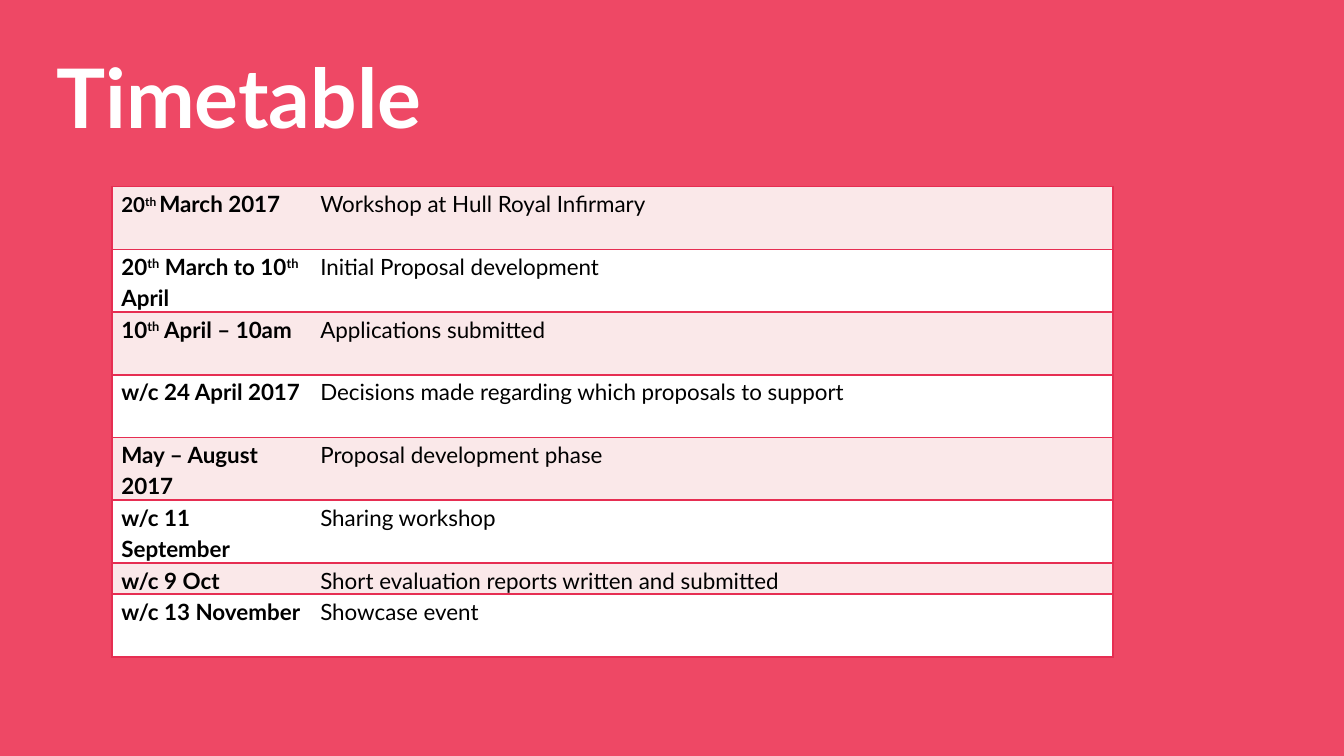
from lxml.etree import SubElement
from pptx import Presentation
from pptx.dml.color import RGBColor
from pptx.enum.text import MSO_ANCHOR, PP_ALIGN
from pptx.oxml.ns import qn
from pptx.util import Pt

FONT = "Lato"
BACKGROUND, BORDER = "EE4865", "E62E52"
BLACK, WHITE, PINK = "000000", "FFFFFF", "FAE8E9"
ROW_HEIGHT, SHORT_ROW_HEIGHT, SHORT_ROW = 33.6, 16.8, 6
COLUMN_WIDTHS = (106.6, 429.8)

SMALL = {"size": 11}
RAISED = {"raised": True}
TIMETABLE = [
    ([("20", SMALL), ("th ", SMALL | RAISED), ("March 2017", {})],
     "Workshop at Hull Royal Infirmary"),
    ([("20", {}), ("th", RAISED), (" March to 10", {}), ("th", RAISED), (" April", {})],
     "Initial Proposal development"),
    ([("10", {}), ("th", RAISED), (" April – 10am", {})], "Applications submitted"),
    ([("w/c 24 April 2017", {})], "Decisions made regarding which proposals to support"),
    ([("May – August 2017", {})], "Proposal development phase"),
    ([("w/c 11 September", {})], "Sharing workshop"),
    ([("w/c 9 Oct", {})], "Short evaluation reports written and submitted"),
    ([("w/c 13 November", {})], "Showcase event"),
]


def paint(fill, color):
    """Give a fill one solid colour."""
    fill.solid()
    fill.fore_color.rgb = RGBColor.from_string(color)


def add_text(para, text, size=12, color=BLACK, bold=False, raised=False):
    """Add a formatted span of text to a paragraph."""
    span = para.add_run()
    span.text = text
    span.font.name = FONT
    span.font.size = Pt(size)
    span.font.bold = bold
    span.font.color.rgb = RGBColor.from_string(color)
    if raised:
        span.font._element.set("baseline", "30000")


def add_borders(cell, visible_sides):
    """Draw the named sides of a cell and hide the others."""
    properties = cell._tc.get_or_add_tcPr()
    for side in "LRTB":
        line = SubElement(properties, qn(f"a:ln{side}"), w=str(Pt(1)))
        if side in visible_sides:
            fill = SubElement(line, qn("a:solidFill"))
            SubElement(fill, qn("a:srgbClr"), val=BORDER)
        else:
            SubElement(line, qn("a:noFill"))


def fill_cell(cell, spans, color, visible_sides, bold=False):
    """Format one table cell and write its spans."""
    add_borders(cell, visible_sides)
    paint(cell.fill, color)
    cell.margin_left = cell.margin_right = Pt(5)
    cell.margin_top = cell.margin_bottom = Pt(0)
    para = cell.text_frame.paragraphs[0]
    para.line_spacing = 1.15
    for text, style in spans:
        add_text(para, text, bold=bold, **style)


def add_title(page, text):
    """Place and write the slide title."""
    title = page.shapes.title
    title.left, title.top, title.width, title.height = Pt(23), Pt(21), Pt(654.5), Pt(60.5)
    title.text_frame.vertical_anchor = MSO_ANCHOR.MIDDLE
    para = title.text_frame.paragraphs[0]
    para.alignment = PP_ALIGN.LEFT
    add_text(para, text, size=44, color=WHITE, bold=True)


def add_timetable(page):
    """Add the table of dates and events."""
    heights = [ROW_HEIGHT] * len(TIMETABLE)
    heights[SHORT_ROW] = SHORT_ROW_HEIGHT
    frame = page.shapes.add_table(len(TIMETABLE), 2, Pt(60), Pt(100),
                                  Pt(sum(COLUMN_WIDTHS)), Pt(sum(heights)))
    table = frame.table
    for column, width in zip(table.columns, COLUMN_WIDTHS):
        column.width = Pt(width)
    for index, (date, event) in enumerate(TIMETABLE):
        table.rows[index].height = Pt(heights[index])
        color = WHITE if index % 2 else PINK
        fill_cell(table.cell(index, 0), date, color, "LTB", bold=True)
        fill_cell(table.cell(index, 1), [(event, {})], color, "RTB")


def main():
    """Build and save the timetable slide."""
    deck = Presentation()
    deck.slide_width, deck.slide_height = Pt(720), Pt(405)
    page = deck.slides.add_slide(deck.slide_layouts[5])
    paint(page.background.fill, BACKGROUND)
    add_title(page, "Timetable")
    add_timetable(page)
    deck.save("out.pptx")


if __name__ == "__main__":
    main()
